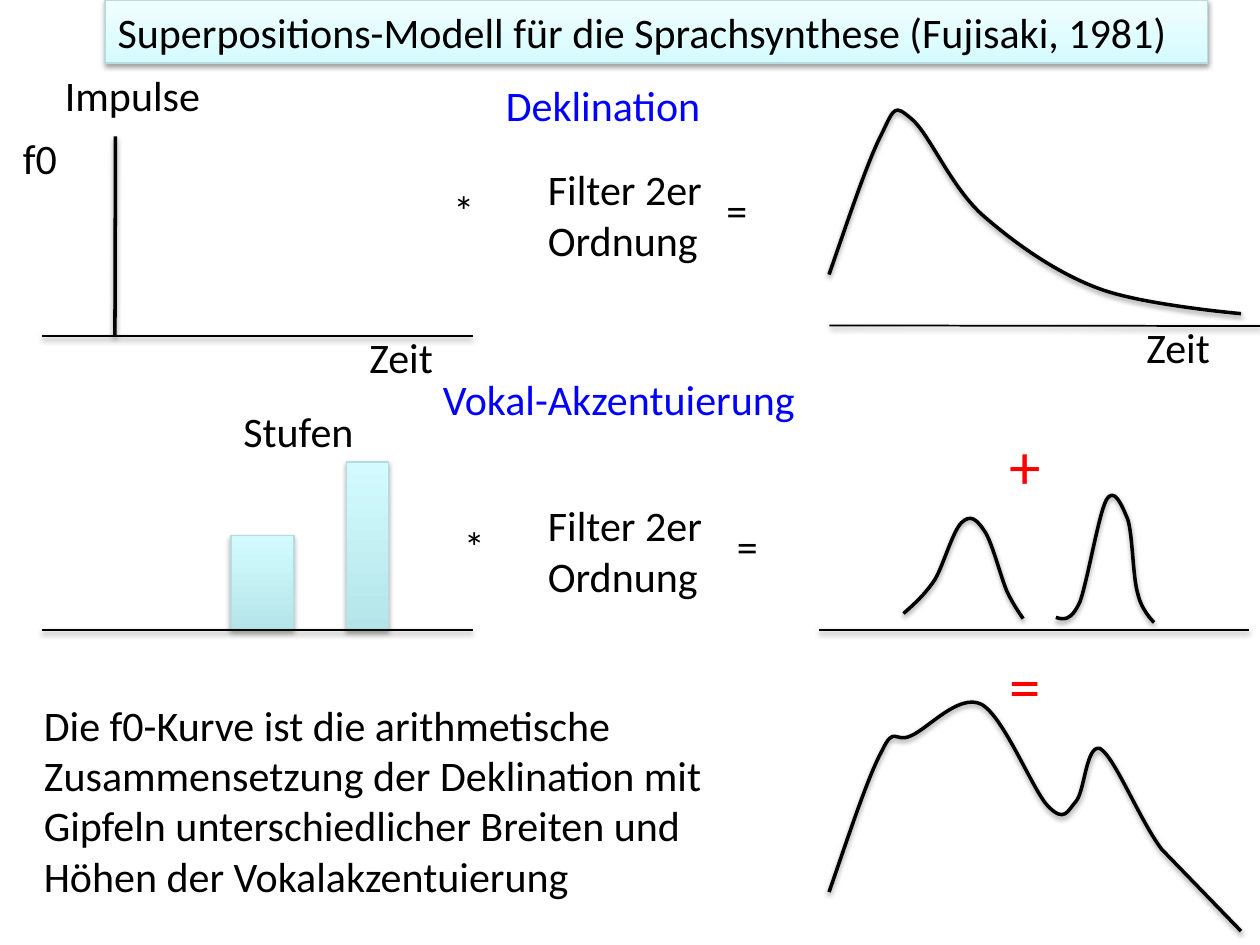
from dataclasses import dataclass

from lxml import etree
from pptx import Presentation
from pptx.dml.color import RGBColor
from pptx.enum.shapes import MSO_CONNECTOR, MSO_SHAPE
from pptx.enum.text import MSO_ANCHOR, MSO_AUTO_SIZE, PP_ALIGN
from pptx.oxml import parse_xml
from pptx.util import Emu, Inches, Pt

STRAIGHT = MSO_CONNECTOR.STRAIGHT
RECTANGLE = MSO_SHAPE.RECTANGLE
TOP, LEFT = MSO_ANCHOR.TOP, PP_ALIGN.LEFT
NO_AUTO_SIZE = MSO_AUTO_SIZE.NONE

DRAWING = "http://schemas.openxmlformats.org/drawingml/2006/main"
COLUMNS, ROWS = 120, 90
WIDTH, HEIGHT = Inches(10), Inches(7.5)
BLACK, BLUE, RED, EDGE = "000000", "0000FF", "FF0000", "B6DCDF"
TITLE_STOPS = [(0, "D3FBFF"), (35, "DFFCFF"), (100, "F2FEFF")]
BAR_STOPS = [(0, "B5E5E9"), (100, "D3FBFF")]
TITLE = "Superpositions-Modell für die Sprachsynthese (Fujisaki, 1981)"
SUMMARY = ("Die f0-Kurve ist die arithmetische Zusammensetzung der Deklination mit "
           "Gipfeln unterschiedlicher Breiten und Höhen der Vokalakzentuierung")
FILTER = "Filter 2er Ordnung"


@dataclass
class Label:
    text: str
    column: float
    row: float
    columns: float
    rows: float = 6.1
    color: str = BLACK
    size: int = 24


@dataclass
class Line:
    start: tuple[float, float]
    end: tuple[float, float]
    width: float = 1


@dataclass
class Bar:
    column: float
    row: float
    columns: float
    rows: float


LABELS = [
    Label("Deklination", 47, 7, 23, color=BLUE),
    Label("Vokal-Akzentuierung", 41, 35, 43, color=BLUE),
    Label("Impulse", 5, 6, 16),
    Label("f0", 1, 12, 7),
    Label("Zeit", 34, 31, 11),
    Label("Zeit", 108, 30, 11),
    Label("*", 42, 17, 6),
    Label(FILTER, 51, 15, 24, 10.9),
    Label("=", 68, 17, 8),
    Label("Stufen", 22, 38, 17),
    Label("*", 43, 49, 6),
    Label(FILTER, 51, 47, 20, 10.9),
    Label("=", 69, 49, 8),
    Label("+", 95, 40, 5, 15.7, RED, 36),
    Label("=", 95, 61, 7, 8.5, RED, 36),
    Label(SUMMARY, 3, 66, 65, 20.6),
]
LINES = [
    Line((4, 32), (45, 32)),
    Line((10.95, 32), (11, 13), 2),
    Line((79, 31), (120, 31.05)),
    Line((4, 60), (45, 60)),
    Line((78, 60), (119, 60)),
]
BARS = [Bar(22, 51, 6, 9), Bar(33, 44, 4, 16)]

# Curves in inches: a start point, then two controls and an end per Bézier segment;
# a single point left over at the end is reached by a straight segment
DECLINATION = [
    (6.58, 2.18), (6.74, 1.72), (6.89, 1.27), (7, 1.06), (7.1, 0.85), (7.1, 0.83), (7.23, 0.94),
    (7.37, 1.05), (7.54, 1.47), (7.79, 1.7), (8.04, 1.92), (8.37, 2.16), (8.72, 2.29),
    (9.06, 2.42), (9.85, 2.49), (9.85, 2.49)]
WIDE_PEAK = [
    (7.17, 4.87), (7.25, 4.8), (7.34, 4.72), (7.42, 4.6), (7.49, 4.48), (7.56, 4.22), (7.63, 4.15),
    (7.7, 4.08), (7.75, 4.12), (7.81, 4.21), (7.87, 4.29), (7.94, 4.57), (7.99, 4.69),
    (8.04, 4.8), (8.12, 4.91), (8.12, 4.91)]
NARROW_PEAK = [
    (8.38, 4.9), (8.44, 4.92), (8.5, 4.93), (8.57, 4.78), (8.63, 4.62), (8.72, 4.08), (8.78, 3.97),
    (8.84, 3.86), (8.9, 4), (8.95, 4.12), (8.99, 4.24), (8.99, 4.58), (9.03, 4.71),
    (9.06, 4.85), (9.16, 4.94), (9.16, 4.94)]
SUM_CURVE = [
    (6.58, 7.08), (6.74, 6.62), (6.89, 6.16), (7, 5.96), (7.1, 5.75), (7.1, 5.9), (7.23, 5.84),
    (7.37, 5.78), (7.61, 5.5), (7.79, 5.59), (7.97, 5.69), (8.2, 6.28), (8.32, 6.4),
    (8.45, 6.53), (8.47, 6.44), (8.54, 6.36), (8.61, 6.28), (8.62, 5.91), (8.73, 5.94),
    (8.85, 6.01), (9.04, 6.5), (9.22, 6.74), (9.85, 7.39)]


def across(columns: float) -> Emu:
    return Emu(round(WIDTH * columns / COLUMNS))


def down(rows: float) -> Emu:
    return Emu(round(HEIGHT * rows / ROWS))


def rgb(color: str) -> RGBColor:
    return RGBColor.from_string(color)


def set_line(shape, color: str, width: float) -> None:
    shape.line.color.rgb = rgb(color)
    shape.line.width = Pt(width)


def add_shadow(shape, opacity: int = 38) -> None:
    effects = etree.SubElement(shape._element.spPr, f"{{{DRAWING}}}effectLst")
    shadow = etree.SubElement(
        effects, f"{{{DRAWING}}}outerShdw", blurRad=str(Pt(3.1)), dist=str(Pt(1.6)),
        dir="5400000", rotWithShape="0")
    color = etree.SubElement(shadow, f"{{{DRAWING}}}srgbClr", val=BLACK)
    etree.SubElement(color, f"{{{DRAWING}}}alpha", val=str(opacity * 1000))


def style_panel(shape, stops: list[tuple[int, str]], opacity: int) -> None:
    """Give a rectangle its upward gradient, edge and shadow."""
    stop_xml = "".join(f'<a:gs pos="{position * 1000}"><a:srgbClr val="{color}"/></a:gs>'
                       for position, color in stops)
    shape._element.spPr.append(parse_xml(
        f'<a:gradFill xmlns:a="{DRAWING}" rotWithShape="1"><a:gsLst>{stop_xml}</a:gsLst>'
        '<a:lin ang="16200000" scaled="0"/></a:gradFill>'))
    set_line(shape, EDGE, 0.75)
    add_shadow(shape, opacity)


def write_text(shape, text: str, color: str, size: int) -> None:
    frame = shape.text_frame
    frame.text = text
    frame.word_wrap = True
    frame.auto_size = NO_AUTO_SIZE
    frame.vertical_anchor = TOP
    paragraph = frame.paragraphs[0]
    paragraph.alignment = LEFT
    font = paragraph.runs[0].font
    font.name, font.size, font.color.rgb = "Calibri", Pt(size), rgb(color)


def draw_title(slide) -> None:
    title = slide.shapes.title
    title.left, title.top = across(10), down(0)
    title.width, title.height = across(105), down(6)
    write_text(title, TITLE, BLACK, 24)
    style_panel(title, TITLE_STOPS, 38)


def draw_label(slide, label: Label) -> None:
    box = slide.shapes.add_textbox(across(label.column), down(label.row),
                                   across(label.columns), down(label.rows))
    write_text(box, label.text, label.color, label.size)


def draw_line(slide, line: Line) -> None:
    (x1, y1), (x2, y2) = line.start, line.end
    connector = slide.shapes.add_connector(STRAIGHT, across(x1), down(y1), across(x2), down(y2))
    set_line(connector, BLACK, line.width)
    add_shadow(connector)


def draw_bar(slide, bar: Bar) -> None:
    shape = slide.shapes.add_shape(RECTANGLE, across(bar.column), down(bar.row),
                                   across(bar.columns), down(bar.rows))
    style_panel(shape, BAR_STOPS, 35)


def bend_segments(curve) -> None:
    """Join every three straight segments into one Bézier segment."""
    segments = list(curve._element.iter(f"{{{DRAWING}}}lnTo"))
    for first in range(0, len(segments) - 2, 3):
        bezier = etree.Element(f"{{{DRAWING}}}cubicBezTo")
        segments[first].addprevious(bezier)
        for segment in segments[first:first + 3]:
            bezier.append(segment[0])
            segment.getparent().remove(segment)


def draw_curve(slide, knots: list[tuple[float, float]]) -> None:
    start, *points = [(Inches(x), Inches(y)) for x, y in knots]
    builder = slide.shapes.build_freeform(*start)
    builder.add_line_segments(points, close=False)
    curve = builder.convert_to_shape()
    bend_segments(curve)
    curve.fill.background()
    set_line(curve, BLACK, 2)
    add_shadow(curve)


def main() -> None:
    presentation = Presentation()
    presentation.slide_width, presentation.slide_height = WIDTH, HEIGHT
    slide = presentation.slides.add_slide(presentation.slide_layouts[5])
    draw_title(slide)
    for bar in BARS:
        draw_bar(slide, bar)
    for line in LINES:
        draw_line(slide, line)
    for knots in (DECLINATION, WIDE_PEAK, NARROW_PEAK, SUM_CURVE):
        draw_curve(slide, knots)
    for label in LABELS:
        draw_label(slide, label)
    presentation.save("out.pptx")


if __name__ == "__main__":
    main()
